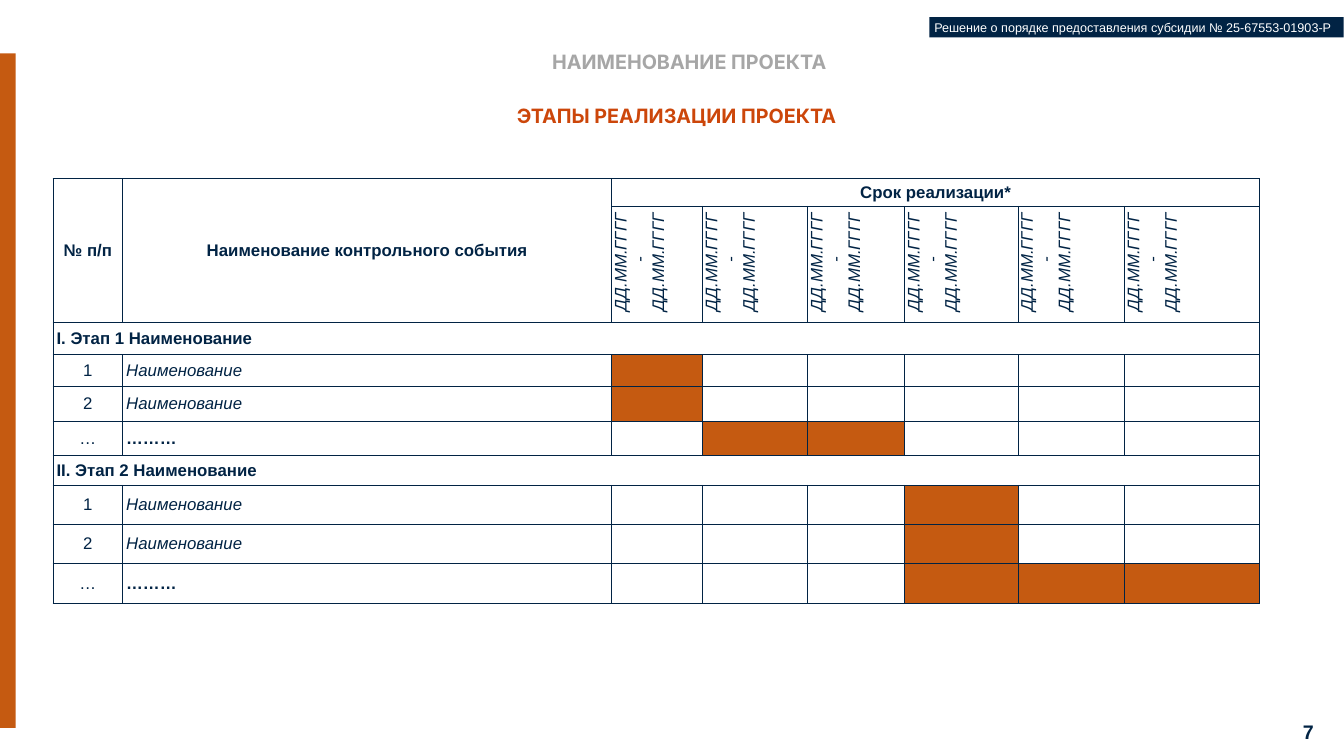
import pptx
import pptx.dml.color
import pptx.enum.shapes
import pptx.enum.text
import pptx.oxml
import pptx.oxml.ns
import pptx.util

Cm = pptx.util.Cm
Pt = pptx.util.Pt
RGBColor = pptx.dml.color.RGBColor
Align = pptx.enum.text.PP_ALIGN
Anchor = pptx.enum.text.MSO_ANCHOR

NAVY = RGBColor(0x01, 0x23, 0x44)
ORANGE = RGBColor(0xC5, 0x5A, 0x11)
TITLE_ORANGE = RGBColor(0xCC, 0x46, 0x0A)
GREY = RGBColor(0xA6, 0xA6, 0xA6)
WHITE = RGBColor(0xFF, 0xFF, 0xFF)

HEAD_FONT, BODY_FONT = "Inter", "Arial"
HEAD_SIZE, BODY_SIZE = 28.2, 24

# Table content: each stage has rows of (number, event, filled periods)
PERIOD_COUNT = 6
PERIOD = ["ДД.ММ.ГГГГ", " - ДД.ММ.ГГГГ"]
STAGES = [
    ("I. Этап 1 Наименование",
     [("1", "Наименование", {0}), ("2", "Наименование", {0}), ("…", "………", {1, 2})]),
    ("II. Этап 2 Наименование",
     [("1", "Наименование", {3}), ("2", "Наименование", {3}), ("…", "………", {3, 4, 5})]),
]
COLUMN_WIDTHS = [3.51, 24.64, 4.57, 5.31, 4.88, 5.72, 5.36, 6.83]
ROW_HEIGHTS = [1.4, 5.61, 1.6, 1.63, 1.73, 1.73, 1.5, 1.98, 1.98, 1.98]


class SlideBuilder:
    """Holds the style and the current slide."""

    def __init__(self, slide):
        self.slide = slide

    def set_text(self, frame, lines, size=BODY_SIZE, font=BODY_FONT, color=NAVY,
                 bold=False, italic=False, align=Align.LEFT, indent=0):
        frame.text = "\n".join(lines)
        for paragraph in frame.paragraphs:
            paragraph.alignment = align
            if indent:
                properties = paragraph._p.get_or_add_pPr()
                properties.set("marL", str(Cm(indent)))
                properties.set("indent", "0")
            paragraph.font.size = Pt(size)
            paragraph.font.name = font
            paragraph.font.bold = bold
            paragraph.font.italic = italic
            paragraph.font.color.rgb = color

    def fit_frame(self, frame, inset_x, inset_y, anchor, wrap=True):
        frame.word_wrap = wrap
        frame.auto_size = pptx.enum.text.MSO_AUTO_SIZE.NONE
        frame.vertical_anchor = anchor
        frame.margin_left = frame.margin_right = Cm(inset_x)
        frame.margin_top = frame.margin_bottom = Cm(inset_y)

    def title(self, text, left, top, width, height, **style):
        title = self.slide.shapes.title
        title.left, title.top = Cm(left), Cm(top)
        title.width, title.height = Cm(width), Cm(height)
        self.fit_frame(title.text_frame, 0.1, 0.1, Anchor.TOP)
        self.set_text(title.text_frame, [text], **style)

    def text(self, text, left, top, width, height,
             inset_x=0.25, inset_y=0.13, anchor=Anchor.TOP, **style):
        box = self.slide.shapes.add_textbox(Cm(left), Cm(top), Cm(width), Cm(height))
        self.fit_frame(box.text_frame, inset_x, inset_y, anchor)
        self.set_text(box.text_frame, [text], **style)

    def bar(self, left, top, width, height, fill, text=None, **style):
        bar = self.slide.shapes.add_shape(
            pptx.enum.shapes.MSO_SHAPE.RECTANGLE,
            Cm(left), Cm(top), Cm(width), Cm(height))
        bar.shadow.inherit = False
        bar.fill.solid()
        bar.fill.fore_color.rgb = fill
        bar.line.fill.background()
        if text:
            self.fit_frame(bar.text_frame, 0.25, 0.13, Anchor.TOP, wrap=False)
            self.set_text(bar.text_frame, [text], **style)

    def table(self, left, top, widths, heights):
        frame = self.slide.shapes.add_table(
            len(heights), len(widths), Cm(left), Cm(top),
            Cm(sum(widths)), Cm(sum(heights)))
        table = frame.table
        table.first_row = table.horz_banding = False
        for column, width in zip(table.columns, widths):
            column.width = Cm(width)
        for row, height in zip(table.rows, heights):
            row.height = Cm(height)
        for cell in table.iter_cells():
            self.border(cell)
            cell.fill.background()
            cell.margin_left = cell.margin_right = Cm(0.18)
            cell.margin_top = cell.margin_bottom = 0
            cell.vertical_anchor = Anchor.MIDDLE
        return table

    def border(self, cell):
        properties = cell._tc.get_or_add_tcPr()
        for side in ("lnL", "lnR", "lnT", "lnB"):
            properties.append(pptx.oxml.parse_xml(
                f'<a:{side} {pptx.oxml.ns.nsdecls("a")} w="{Pt(1)}"><a:solidFill>'
                f'<a:srgbClr val="{NAVY}"/></a:solidFill></a:{side}>'))

    def cell(self, cell, *lines, vertical=False, **style):
        if vertical:
            cell._tc.get_or_add_tcPr().set("vert", "vert270")
        self.set_text(cell.text_frame, lines, **style)


def build_schedule(builder):
    schedule = builder.table(2.67, 8.99, COLUMN_WIDTHS, ROW_HEIGHTS)
    last = len(COLUMN_WIDTHS) - 1
    first_period = len(COLUMN_WIDTHS) - PERIOD_COUNT

    # Header rows
    for column, heading in enumerate(["№ п/п", "Наименование контрольного события"]):
        schedule.cell(0, column).merge(schedule.cell(1, column))
        builder.cell(schedule.cell(0, column), heading, bold=True, align=Align.CENTER)
    schedule.cell(0, first_period).merge(schedule.cell(0, last))
    builder.cell(schedule.cell(0, first_period), "Срок реализации*",
                 bold=True, align=Align.CENTER)
    for column in range(first_period, last + 1):
        builder.cell(schedule.cell(1, column), *PERIOD, vertical=True,
                     italic=True, align=Align.CENTER, indent=0.2)

    # Stages and their events
    row = 2
    for stage, events in STAGES:
        schedule.cell(row, 0).merge(schedule.cell(row, last))
        builder.cell(schedule.cell(row, 0), stage, bold=True)
        for row, (number, event, periods) in enumerate(events, row + 1):
            more = number == "…"
            builder.cell(schedule.cell(row, 0), number, align=Align.CENTER)
            builder.cell(schedule.cell(row, 1), event, bold=more, italic=not more)
            for period in periods:
                fill = schedule.cell(row, first_period + period).fill
                fill.solid()
                fill.fore_color.rgb = ORANGE
        row += 1


def main():
    deck = pptx.Presentation()
    deck.slide_width, deck.slide_height = Cm(67.74), Cm(38.1)
    builder = SlideBuilder(deck.slides.add_slide(deck.slide_layouts[5]))
    heading = dict(size=HEAD_SIZE, font=HEAD_FONT, bold=True, align=Align.CENTER)

    # Title and side bar
    builder.title("ЭТАПЫ РЕАЛИЗАЦИИ ПРОЕКТА", 21.87, 5.13, 24.46, 1.42,
                  color=TITLE_ORANGE, **heading)
    builder.bar(0, 2.69, 0.79, 33.99, ORANGE)

    # Schedule
    build_schedule(builder)

    # Page number, project name and document reference
    builder.text("7", 64.49, 36.12, 2.06, 1.55, inset_x=0.33, inset_y=0.33,
                 anchor=Anchor.MIDDLE, size=28, bold=True, align=Align.RIGHT)
    builder.text("НАИМЕНОВАНИЕ ПРОЕКТА", 4.88, 2.39, 59.72, 1.47,
                 color=GREY, **heading)
    builder.bar(46.84, 0.86, 20.88, 1.02, NAVY,
                "Решение о порядке предоставления субсидии № 25-67553-01903-Р",
                size=18, color=WHITE)

    deck.save("out.pptx")


if __name__ == "__main__":
    main()
